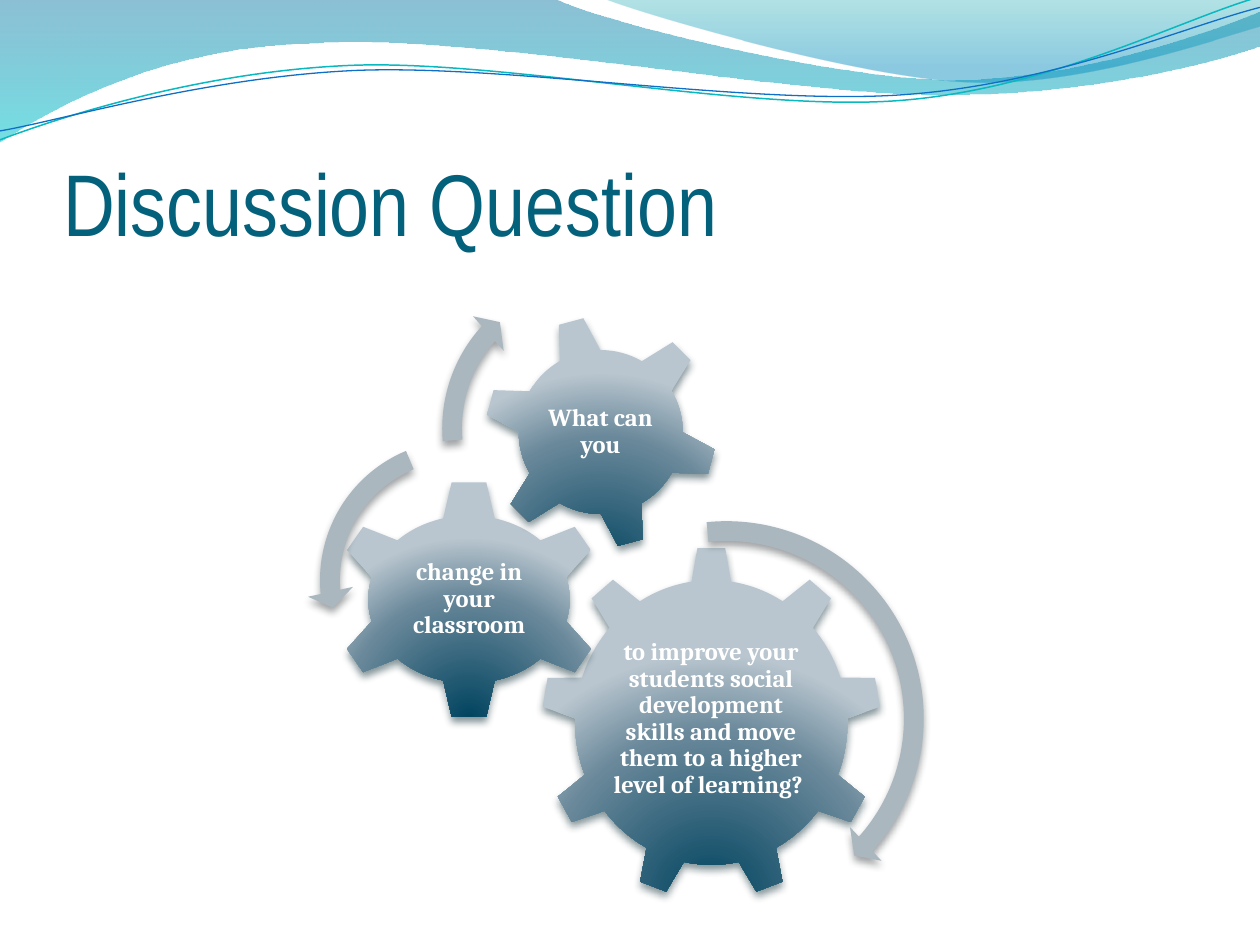
from lxml.etree import SubElement
from pptx import Presentation
from pptx.dml.color import RGBColor
from pptx.enum.shapes import MSO_SHAPE as Shape
from pptx.enum.text import MSO_ANCHOR as Anchor, MSO_AUTO_SIZE as AutoSize, PP_ALIGN as Align
from pptx.oxml.ns import qn
from pptx.util import Cm, Pt

COLORS = {
    "title": "04617B", "text": "FFFFFF", "arrow": "ABB7BF",
    "gear_dark": "00435F", "gear_mid": "69889A", "gear_light": "B9C6CF",
    "gear_shadow": "00232C", "arrow_shadow": "3C4043",
    "wave_blue": "0074A1", "wave_aqua": "00C6CF",
    "crest_green": "00A1A9", "crest_blue": "008BBF",
    "line_aqua": "0AB8BF", "line_blue": "0F6FC6",
}
GEAR_STOPS = [(0, "gear_dark", 100), (68, "gear_mid", 100), (100, "gear_light", 100)]

WAVES = [
    ([[(0, 0)], [(11.18, -0.03)],
      [(12.09, 0.43), (16.87, 1.6), (19.25, 1.6)],
      [(21.67, 1.6), (24.33, 0.66), (25.4, 0.23)], [(25.43, 0.91)],
      [(24.97, 1.12), (22.1, 1.93), (18.95, 1.91)],
      [(15.8, 1.91), (9.7, 0.71), (6.53, 0.86)],
      [(3.28, 0.91), (1.17, 2.11), (-0.03, 2.87)], [(0, 0)]],
     [(0, "wave_blue", 45), (100, "wave_aqua", 55)]),
    ([[(12.17, -0.03)],
      [(12.93, 0.28), (17.32, 1.57), (19.53, 1.65)],
      [(21.74, 1.75), (24.41, 0.81), (25.4, 0.53)], [(25.4, 0)], [(12.17, -0.03)]],
     [(0, "crest_green", 30), (80, "crest_blue", 45)]),
]
WAVE_LINES = [
    ([[(0, 2.82)],
      [(1.22, 2.36), (4.01, 1.45), (7.04, 1.32)],
      [(10.03, 1.19), (15.06, 2.26), (18.11, 2.03)],
      [(21.16, 1.8), (23.83, 0.38), (25.35, -0.05)]], "line_aqua", 0.85),
    ([[(0, 2.64)],
      [(1.19, 2.44), (4.17, 1.55), (7.19, 1.42)],
      [(10.24, 1.3), (15.16, 2.13), (18.21, 1.91)],
      [(21.23, 1.7), (23.9, 0.53), (25.4, 0.15)]], "line_blue", 0.75),
]
GEARS = [
    (Shape.GEAR_9, (4.71, 5.7, 6.86, 7.11), 0, (6.09, 7.35, 4.09, 3.68),
     "to improve your students social development skills and move them to a higher level of learning? "),
    (Shape.GEAR_6, (0.5, 4.36, 5.51, 4.83), 0, (1.81, 5.58, 2.9, 2.39),
     "change in your classroom"),
    (Shape.GEAR_6, (3.55, 1.04, 4.72, 4.72), 345, (4.59, 2.08, 2.64, 2.64),
     "What can you"),
]
ARROWS = [
    (Shape.CIRCULAR_ARROW, (4.2, 4.93, 8.49, 8.49), (0.047, 2.99, 25.197, 158.538, 0.055)),
    (Shape.LEFT_CIRCULAR_ARROW, (-0.01, 3.3, 6.17, 6.17), (0.065, 4.3, 104.891, 148.378, 0.075)),
    (Shape.CIRCULAR_ARROW, (2.45, 0, 6.65, 6.65), (0.06, 3.941, 133.138, 105.082, 0.07)),
]


def rgb(name):
    return RGBColor.from_string(COLORS[name])


def place(origin, box):
    left, top, width, height = box
    return Cm(origin[0] + left), Cm(origin[1] + top), Cm(width), Cm(height)


def add_color(parent, name, alpha):
    color = SubElement(parent, qn("a:srgbClr"), val=COLORS[name])
    if alpha < 100:
        SubElement(color, qn("a:alpha"), val=str(alpha * 1000))


def set_gradient(shape, stops, radial=False):
    shape.fill.background()
    properties = shape._element.spPr
    empty = properties.find(qn("a:noFill"))
    gradient = SubElement(properties, qn("a:gradFill"), rotWithShape="1")
    stop_list = SubElement(gradient, qn("a:gsLst"))
    for position, name, alpha in stops:
        add_color(SubElement(stop_list, qn("a:gs"), pos=str(position * 1000)), name, alpha)
    if radial:
        circle = SubElement(gradient, qn("a:path"), {"path": "circle"})
        SubElement(circle, qn("a:fillToRect"), l="50000", t="130000", r="50000", b="-30000")
    else:
        SubElement(gradient, qn("a:lin"), ang="5400000", scaled="0")
    properties.replace(empty, gradient)


def set_shadow(shape, name):
    shape.shadow.inherit = False
    effects = shape._element.spPr.find(qn("a:effectLst"))
    shadow = SubElement(effects, qn("a:outerShdw"), blurRad=str(Pt(4.5)), dist=str(Pt(3)),
                        dir="5400000", rotWithShape="0")
    add_color(shadow, name, 48)


def add_curve(page, origin, segments, close):
    outline = [[(Cm(origin[0] + x), Cm(origin[1] + y)) for x, y in segment]
               for segment in segments]
    builder = page.shapes.build_freeform(*outline[0][0])
    builder.add_line_segments([segment[-1] for segment in outline[1:]], close=close)
    shape = builder.convert_to_shape()
    shape.shadow.inherit = False
    straight_parts = list(shape._element.iter(qn("a:lnTo")))
    for straight, segment in zip(straight_parts, outline[1:]):
        if len(segment) == 3:
            parent = straight.getparent()
            bend = SubElement(parent, qn("a:cubicBezTo"))
            for x, y in segment:
                SubElement(bend, qn("a:pt"), x=str(x - shape.left), y=str(y - shape.top))
            parent.replace(straight, bend)
    return shape


def add_wave_header(page, origin):
    for segments, stops in WAVES:
        wave = add_curve(page, origin, segments, True)
        set_gradient(wave, stops)
        wave.line.fill.background()
    for segments, color, width in WAVE_LINES:
        line = add_curve(page, origin, segments, False)
        line.fill.background()
        line.line.color.rgb = rgb(color)
        line.line.width = Pt(width)


def add_title(page, box, text):
    title = page.shapes.title
    title.left, title.top, title.width, title.height = (Cm(length) for length in box)
    frame = title.text_frame
    frame.text = text
    frame.auto_size = AutoSize.NONE
    frame.vertical_anchor = Anchor.BOTTOM
    frame.margin_left = frame.margin_right = frame.margin_bottom = 0
    frame.margin_top = Cm(0.13)
    para = frame.paragraphs[0]
    para.alignment = Align.LEFT
    para.font.name = "Arial Narrow"
    para.font.size = Pt(50)
    para.font.color.rgb = rgb("title")


def add_gear_label(page, origin, box, text):
    frame = page.shapes.add_textbox(*place(origin, box)).text_frame
    frame.word_wrap = True
    frame.vertical_anchor = Anchor.MIDDLE
    frame.margin_left = frame.margin_right = frame.margin_top = frame.margin_bottom = Cm(0.05)
    frame.text = text
    para = frame.paragraphs[0]
    para.alignment = Align.CENTER
    para.line_spacing = 0.9
    para.font.name = "Cambria"
    para.font.size = Pt(14)
    para.font.bold = True
    para.font.color.rgb = rgb("text")


def add_gear_diagram(page, origin):
    for kind, box, rotation, label_box, text in GEARS:
        gear = page.shapes.add_shape(kind, *place(origin, box))
        gear.rotation = rotation
        set_gradient(gear, GEAR_STOPS, radial=True)
        gear.line.fill.background()
        set_shadow(gear, "gear_shadow")
        add_gear_label(page, origin, label_box, text)
    for kind, box, adjustments in ARROWS:
        arrow = page.shapes.add_shape(kind, *place(origin, box))
        for index, value in enumerate(adjustments):
            arrow.adjustments[index] = value
        arrow.fill.solid()
        arrow.fill.fore_color.rgb = rgb("arrow")
        arrow.line.fill.background()
        set_shadow(arrow, "arrow_shadow")


def main():
    deck = Presentation()
    deck.slide_width, deck.slide_height = Cm(25.4), Cm(19.05)
    page = deck.slides.add_slide(deck.slide_layouts[5])
    add_wave_header(page, (0, 0))
    add_gear_diagram(page, (6.2, 5.31))
    add_title(page, (1.27, 1.95, 22.86, 3.18), "Discussion Question")
    deck.save("out.pptx")


if __name__ == "__main__":
    main()
